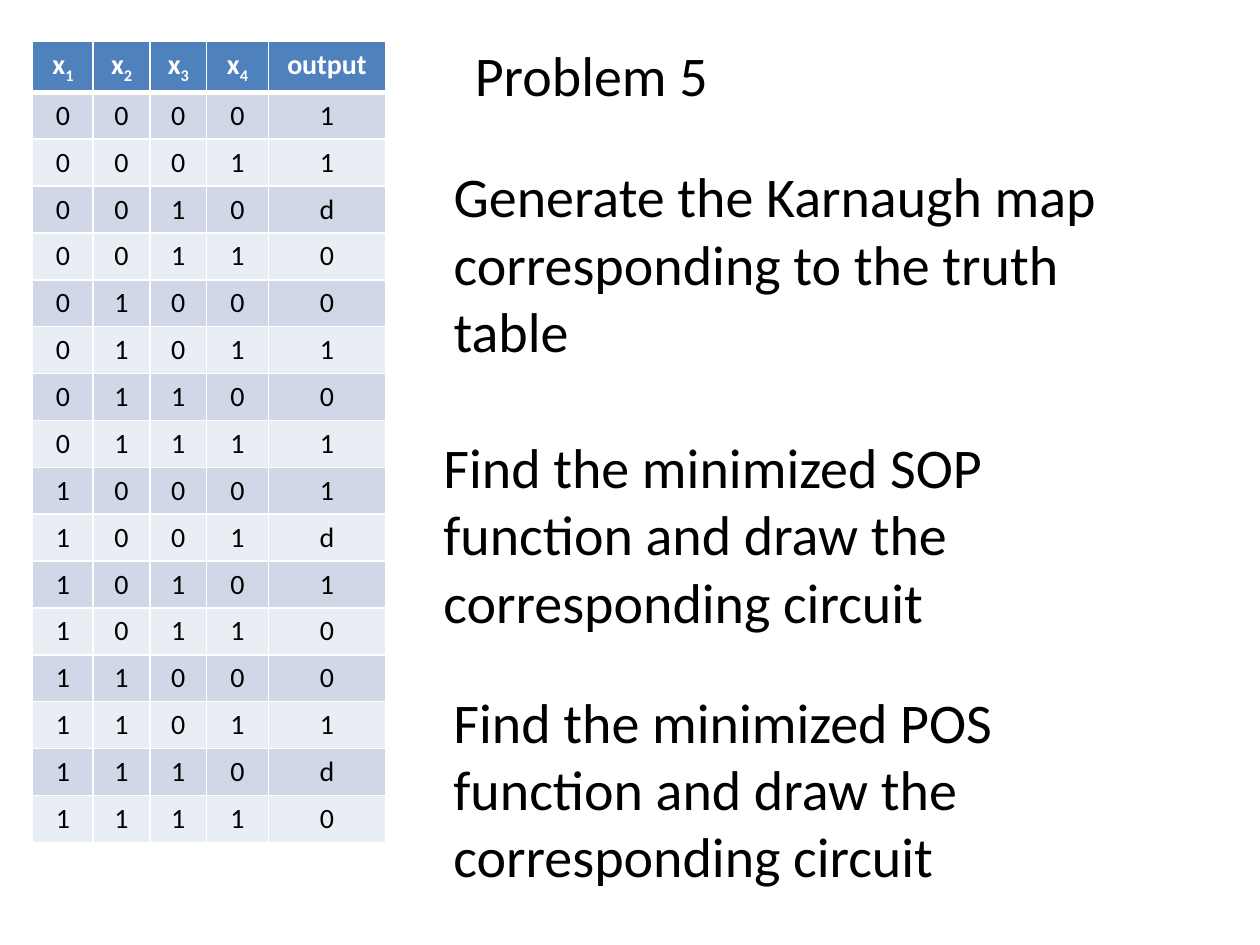
from dataclasses import dataclass
from lxml import etree
from pptx import Presentation
from pptx.dml.color import RGBColor
from pptx.enum.text import MSO_ANCHOR, MSO_AUTO_SIZE, PP_ALIGN
from pptx.oxml.ns import qn
from pptx.util import Inches, Pt

MIDDLE = MSO_ANCHOR.MIDDLE
FIXED = MSO_AUTO_SIZE.NONE
LEFT, CENTER = PP_ALIGN.LEFT, PP_ALIGN.CENTER


@dataclass(frozen=True)
class Theme:
    font: str = "Calibri"
    black: str = "000000"
    white: str = "FFFFFF"
    head: str = "4F81BD"
    bands: tuple = ("D0D8E8", "E9EDF4")
    large: int = 32
    small: int = 16


theme = Theme()


def add_run(para, text, size, color, bold=False):
    run = para.add_run()
    run.text = text
    font = run.font
    font.name, font.size, font.bold = theme.font, Pt(size), bold
    font.color.rgb = RGBColor.from_string(color)
    return run


def add_edge(cell, side, width):
    props = cell._tc.get_or_add_tcPr()
    edge = etree.SubElement(props, qn("a:ln" + side), w=str(Pt(width)))
    fill = etree.SubElement(edge, qn("a:solidFill"))
    etree.SubElement(fill, qn("a:srgbClr"), val=theme.white)


prs = Presentation()
prs.slide_width, prs.slide_height = Inches(10), Inches(7.5)
slide = prs.slides.add_slide(prs.slide_layouts[5])

heads = [("x", "1"), ("x", "2"), ("x", "3"), ("x", "4"), ("output", "")]
outputs = "11d001011d1001d0"
rows = [[(bit, "") for bit in f"{num:04b}{out}"] for num, out in enumerate(outputs)]
widths = [0.48, 0.45, 0.45, 0.49, 0.93]
height = 0.3

count = len(rows) + 1
frame = slide.shapes.add_table(
    count, len(widths), Inches(0.26), Inches(0.33),
    Inches(sum(widths)), Inches(height * count))
table = frame.table
for col, width in zip(table.columns, widths):
    col.width = Inches(width)

for i, row in enumerate([heads] + rows):
    table.rows[i].height = Inches(height)
    is_head = i == 0
    color = theme.white if is_head else theme.black
    back = theme.head if is_head else theme.bands[(i - 1) % 2]
    for j, (text, sub) in enumerate(row):
        cell = table.cell(i, j)
        for side in "LRTB":
            thick = (i, side) in [(0, "B"), (1, "T")]
            add_edge(cell, side, 3 if thick else 1)
        cell.fill.solid()
        cell.fill.fore_color.rgb = RGBColor.from_string(back)
        para = cell.text_frame.paragraphs[0]
        para.alignment = CENTER
        add_run(para, text, theme.small, color, is_head)
        if sub:
            run = add_run(para, sub, theme.small, color, is_head)
            run.font._element.set("baseline", "-25000")

title = slide.shapes.title
title.left, title.top = Inches(3.5), Inches(1.25)
title.width, title.height = Inches(5.92), Inches(1.67)

texts = [(title, "Generate the Karnaugh map corresponding to the truth table")]
boxes = [
    (3.67, 0.15, 2.38, 0.87, "Problem 5"),
    (3.42, 3.4, 5.92, 1.67,
     "Find the minimized SOP function and draw the corresponding circuit"),
    (3.5, 5.42, 5.92, 1.67,
     "Find the minimized POS function and draw the corresponding circuit"),
]
for *place, text in boxes:
    box = slide.shapes.add_textbox(*[Inches(num) for num in place])
    texts.append((box, text))

for shape, text in texts:
    body = shape.text_frame
    body.word_wrap = True
    body.auto_size = FIXED
    body.vertical_anchor = MIDDLE
    para = body.paragraphs[0]
    para.alignment = LEFT
    add_run(para, text, theme.large, theme.black)

prs.save("out.pptx")
